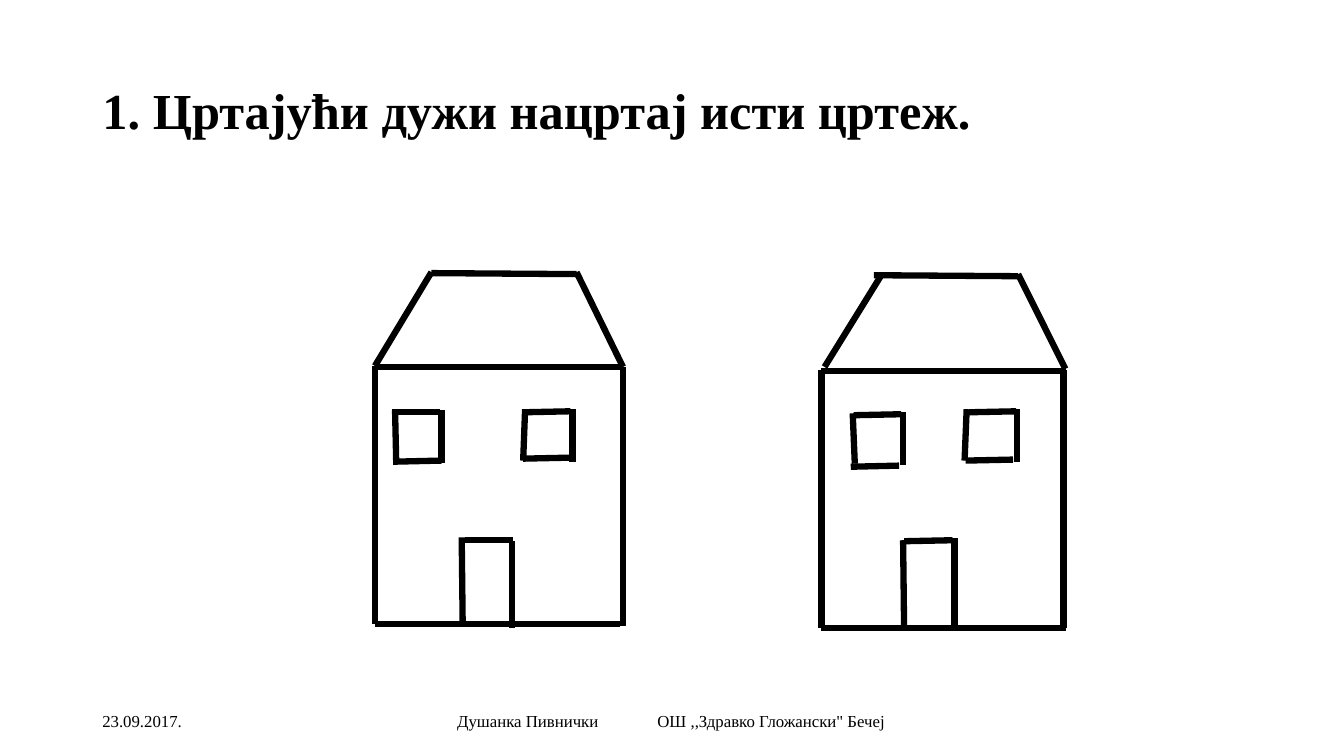
from dataclasses import dataclass

from lxml import etree
from pptx import Presentation
from pptx import util as u
from pptx.dml.color import RGBColor
from pptx.enum import shapes, text
from pptx.oxml import ns


@dataclass(frozen=True)
class Theme:
    font: str = "Times New Roman"
    ink: RGBColor = RGBColor(0, 0, 0)
    title_size: float = 36
    footer_size: float = 12
    stroke: float = 4.5


HOUSES = [
    {
        "walls": [(267.8, 261.4, 267.8, 445.7), (267.8, 445.7, 442.8, 445.7),
                  (445, 262.1, 445, 447.1), (267.8, 262.1, 442.8, 262.1)],
        "roof": [(267.8, 261.4, 308.2, 194.4), (445, 262.1, 411.8, 194.4),
                 (308.2, 195.1, 411.8, 195.8)],
        "left window": [(283, 329, 282.2, 293), (280.1, 294.5, 314.6, 294.5),
                        (280.8, 329.8, 315.4, 329), (315.4, 330.5, 315.4, 293)],
        "right window": [(373.7, 294.5, 407.5, 293.8), (373.7, 329, 375.1, 292.3),
                         (373.7, 327.6, 407.5, 326.9), (409, 329.8, 409, 292.3)],
        "door": [(331.9, 385.9, 366.5, 385.9), (330.5, 445.7, 329.8, 383.8),
                 (365.8, 448.6, 365.8, 386.6)],
    },
    {
        "walls": [(586.8, 448.6, 761.8, 448.6), (586.8, 264.2, 586.8, 448.6),
                  (759.6, 264.2, 759.6, 448.6), (586.8, 265, 761.8, 265)],
        "roof": [(589, 262.1, 630, 195.8), (761, 263.5, 727.2, 195.8),
                 (624.2, 196.6, 727.2, 197.3)],
        "left window": [(609.8, 296.6, 643.7, 295.9), (610.6, 331.2, 609.1, 295.2),
                        (645.1, 331.9, 645.1, 294.5), (607.7, 333.4, 642.2, 332.6)],
        "right window": [(689, 329, 690.5, 292.3), (726.5, 329.8, 726.5, 292.3),
                         (691.9, 294.5, 725.8, 293.8), (689.8, 329, 723.6, 328.3)],
        "door": [(645.8, 448.6, 645.1, 385.9), (645.8, 386.6, 680.4, 385.9),
                 (681.8, 447.1, 681.8, 384.5)],
    },
]


class Painter:
    """Draws titles, footers and line houses on the current slide in one style."""

    def __init__(self, page, theme):
        self.page = page
        self.theme = theme

    def apply(self, target, values):
        for name, value in values.items():
            setattr(target, name, value)

    def letter(self, box, wording, size, bold=False, spacing=None):
        frame = box.text_frame
        self.apply(frame, {"word_wrap": True,
                           "vertical_anchor": text.MSO_ANCHOR.MIDDLE})
        para = frame.paragraphs[0]
        self.apply(para, {"alignment": text.PP_ALIGN.LEFT, "line_spacing": spacing})
        span = para.add_run()
        span.text = wording
        self.apply(span.font, {"name": self.theme.font, "size": u.Pt(size), "bold": bold})
        span.font.color.rgb = self.theme.ink
        return para

    def title(self, wording, left, top, width, height):
        box = self.page.shapes.title
        self.apply(box, {"left": u.Pt(left), "top": u.Pt(top),
                         "width": u.Pt(width), "height": u.Pt(height)})
        self.letter(box, wording, self.theme.title_size, bold=True, spacing=0.9)

    def footer(self, wording, left, top, width, height, tab=None):
        box = self.page.shapes.add_textbox(*map(u.Pt, (left, top, width, height)))
        para = self.letter(box, wording, self.theme.footer_size)
        if tab:
            stops = etree.SubElement(para._p.get_or_add_pPr(), ns.qn("a:tabLst"))
            etree.SubElement(stops, ns.qn("a:tab"), pos=str(u.Pt(tab)), algn="l")

    def segment(self, start_x, start_y, end_x, end_y):
        line = self.page.shapes.add_connector(
            shapes.MSO_CONNECTOR.STRAIGHT,
            *map(u.Pt, (start_x, start_y, end_x, end_y)))
        line.line.color.rgb = self.theme.ink
        line.line.width = u.Pt(self.theme.stroke)
        etree.SubElement(line._element.spPr, ns.qn("a:effectLst"))

    def house(self, parts):
        for segments in parts.values():
            for ends in segments:
                self.segment(*ends)


def main():
    deck = Presentation()
    deck.slide_width, deck.slide_height = u.Pt(960), u.Pt(540)
    page = deck.slides.add_slide(deck.slide_layouts.get_by_name("Title Only"))
    painter = Painter(page, Theme())
    painter.title("1. Цртајући дужи нацртај исти цртеж.", 66, 28.8, 828, 104.4)
    painter.footer("23.09.2017.", 66, 500.5, 216, 28.8)
    painter.footer("Душанка Пивнички\tОШ ,,Здравко Гложански\" Бечеј",
                   319.5, 500.5, 324, 28.8, tab=143)
    for parts in HOUSES:
        painter.house(parts)
    deck.save("out.pptx")


if __name__ == "__main__":
    main()
